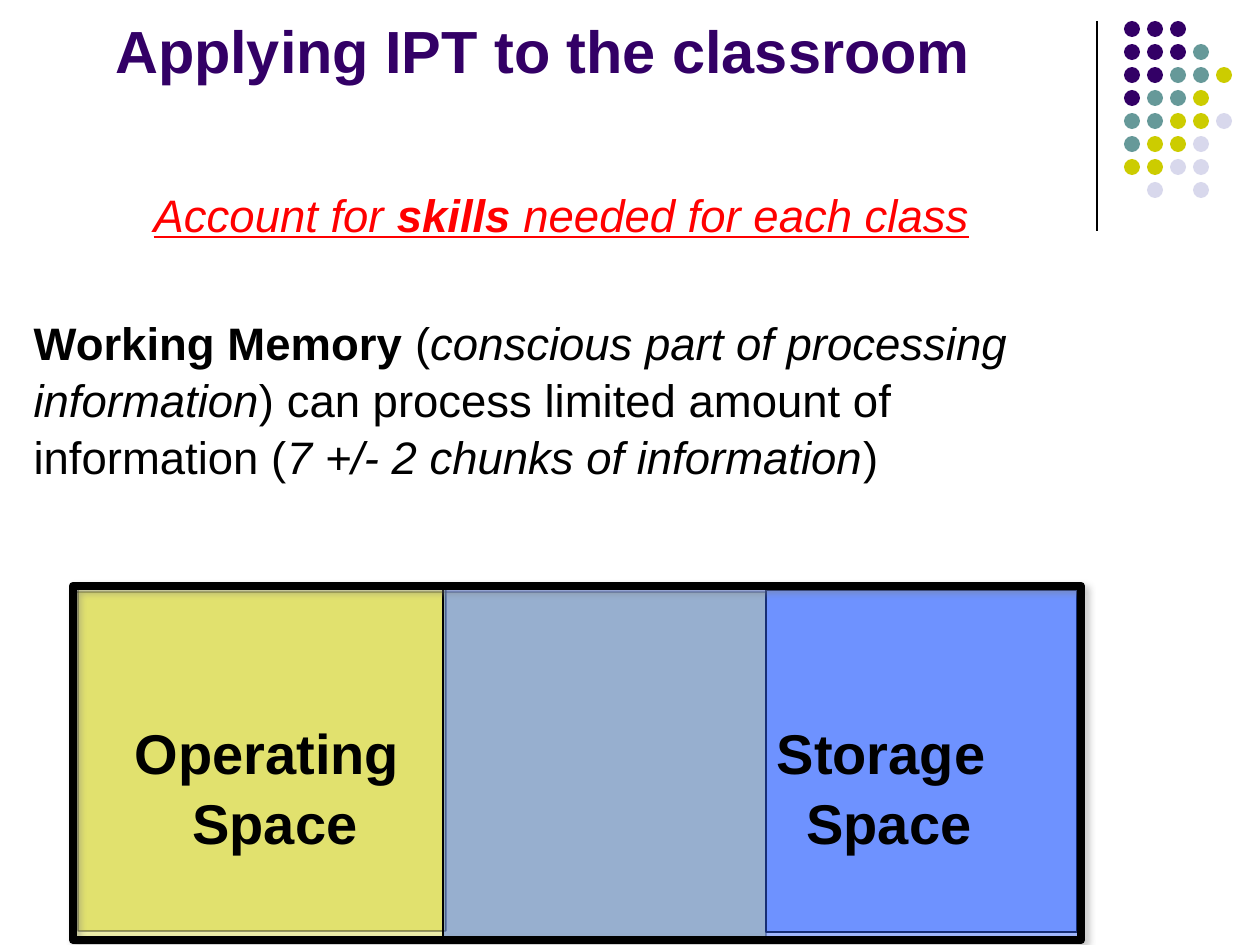
"""Build the slide on working memory and the skills needed for each class."""
from dataclasses import dataclass

from lxml.etree import SubElement
from pptx import Presentation
from pptx.dml.color import RGBColor
from pptx.enum.shapes import MSO_CONNECTOR, MSO_SHAPE
from pptx.enum.text import MSO_ANCHOR, MSO_AUTO_SIZE, PP_ALIGN
from pptx.oxml.ns import qn
from pptx.util import Emu, Pt


@dataclass(frozen=True)
class Theme:
    """Colours, font and type sizes."""
    font: str = "Arial"
    title_size: int = 34
    body_size: int = 26
    label_size: int = 32
    purple: str = "330066"
    teal: str = "669999"
    lime: str = "CCCC00"
    lavender: str = "D8D8EC"
    blue: str = "3366FF"
    red: str = "FF0000"
    black: str = "000000"
    grey: str = "808080"


def px(length):
    """Turn pixels into EMU."""
    return Emu(round(length * 914400 / 126))


def set_alpha(parent, percent):
    """Make the solid fill under an XML element partly opaque."""
    colour = parent.find(qn("a:solidFill")).find(qn("a:srgbClr"))
    SubElement(colour, qn("a:alpha"), val=str(percent * 1000))


class SlideBuilder:
    """Hold the theme and the current slide and draw each kind of element."""

    def __init__(self, theme, page):
        """Keep the theme and the slide."""
        self.theme = theme
        self.page = page

    def style(self, para, size, colour, align=PP_ALIGN.LEFT, bold=False, italic=False):
        """Set alignment and font on a paragraph."""
        para.alignment = align
        font = para.font
        font.name = self.theme.font
        font.size = Pt(size)
        font.bold = bold
        font.italic = italic
        font.color.rgb = RGBColor.from_string(colour)

    def place(self, box, left, top, width, height):
        """Move a box and make its text wrap at a fixed size."""
        box.left, box.top, box.width, box.height = map(px, (left, top, width, height))
        box.text_frame.word_wrap = True
        box.text_frame.auto_size = MSO_AUTO_SIZE.NONE

    def title(self, text, bounds):
        """Fill the title placeholder."""
        box = self.page.shapes.title
        self.place(box, *bounds)
        box.text_frame.vertical_anchor = MSO_ANCHOR.BOTTOM
        box.text_frame.text = text
        self.style(box.text_frame.paragraphs[0], self.theme.title_size,
                   self.theme.purple, PP_ALIGN.CENTER, bold=True)

    def body(self, bounds, inset_top):
        """Place the body placeholder and return its text frame."""
        box = self.page.placeholders[1]
        self.place(box, *bounds)
        box.text_frame.margin_top = px(inset_top)
        return box.text_frame

    def body_paragraph(self, para, spans, colour, align, italic=False, gap=0):
        """Write (text, property) spans into a body paragraph without a bullet."""
        properties = para._p.get_or_add_pPr()
        properties.set("marL", "0")
        properties.set("indent", "0")
        SubElement(properties, qn("a:buNone"))
        self.style(para, self.theme.body_size, colour, align, italic=italic)
        para.line_spacing = 1.05
        para.space_before = Pt(gap)
        for text, emphasis in spans:
            span = para.add_run()
            span.text = text
            for name in emphasis.split():
                setattr(span.font, name, True)

    def label(self, lines, bounds):
        """Add a bold centred label, one paragraph a line."""
        box = self.page.shapes.add_textbox(0, 0, 0, 0)
        self.place(box, *bounds)
        box.text_frame.text = "\n".join(lines)
        for para in box.text_frame.paragraphs:
            self.style(para, self.theme.label_size, self.theme.black,
                       PP_ALIGN.CENTER, bold=True)
            para.line_spacing = 1.04

    def rectangle(self, bounds, line_width):
        """Add an unfilled rectangle with a black outline."""
        box = self.page.shapes.add_shape(MSO_SHAPE.RECTANGLE, *map(px, bounds))
        box.shadow.inherit = False
        box.fill.background()
        box.line.color.rgb = RGBColor.from_string(self.theme.black)
        box.line.width = Pt(line_width)
        return box

    def pane(self, bounds, colour, opacity, line_opacity):
        """Add a see-through pane."""
        box = self.rectangle(bounds, 0.75)
        box.fill.solid()
        box.fill.fore_color.rgb = RGBColor.from_string(colour)
        properties = box.element.spPr
        set_alpha(properties, opacity)
        set_alpha(properties.find(qn("a:ln")), line_opacity)

    def frame(self, bounds):
        """Add the heavy frame with its soft shadow."""
        box = self.rectangle(bounds, 4.75)
        effects = box.element.spPr.find(qn("a:effectLst"))
        shadow = SubElement(effects, qn("a:outerShdw"), blurRad=str(Pt(4)),
                            dist=str(Pt(3)), dir="2700000", rotWithShape="0")
        colour = SubElement(shadow, qn("a:srgbClr"), val=self.theme.grey)
        SubElement(colour, qn("a:alpha"), val="43000")

    def rule(self, left, top, bottom):
        """Add a thin vertical line."""
        line = self.page.shapes.add_connector(
            MSO_CONNECTOR.STRAIGHT, px(left), px(top), px(left), px(bottom))
        line.line.color.rgb = RGBColor.from_string(self.theme.black)
        line.line.width = Pt(0.75)
        SubElement(line.element.spPr, qn("a:effectLst"))

    def dots(self, rows, left, top, step, size):
        """Add a grouped grid of dots from rows of colour letters."""
        colours = {"P": self.theme.purple, "T": self.theme.teal,
                   "L": self.theme.lime, "V": self.theme.lavender}
        group = self.page.shapes.add_group_shape()
        for row, letters in enumerate(rows):
            for column, letter in enumerate(letters):
                if letter in colours:
                    dot = group.shapes.add_shape(
                        MSO_SHAPE.OVAL, px(left + column * step),
                        px(top + row * step), px(size), px(size))
                    dot.shadow.inherit = False
                    dot.fill.solid()
                    dot.fill.fore_color.rgb = RGBColor.from_string(colours[letter])
                    dot.line.fill.background()


def main():
    """Build and save the deck."""
    deck = Presentation()
    deck.slide_width, deck.slide_height = px(1260), px(945)
    theme = Theme()
    builder = SlideBuilder(theme, deck.slides.add_slide(deck.slide_layouts[1]))

    builder.rule(1097, 21, 231)
    builder.dots(("PPP", "PPPT", "PPTTL", "PTTL", "TTLLV", "TLLV", "LLVV", ".V.V"),
                 left=1124, top=21, step=23, size=16)
    builder.title("Applying IPT to the classroom ", (0, 1, 1102, 91))

    frame = builder.body((21, 147, 1081, 451), inset_top=37)
    builder.body_paragraph(
        frame.paragraphs[0],
        (("Account for ", "underline"), ("skills", "underline bold"),
         (" needed for each class", "underline")),
        theme.red, PP_ALIGN.CENTER, italic=True)
    builder.body_paragraph(
        frame.add_paragraph(),
        (("Working Memory ", "bold"), ("(", ""),
         ("conscious part of processing information", "italic"),
         (") can process limited amount of information (", ""),
         ("7 +/- 2 chunks of information", "italic"), (")", "")),
        theme.black, PP_ALIGN.LEFT, gap=40.5)

    for bounds, colour, opacity, line_opacity in (
            ((73, 592, 693, 345), theme.lime, 34, 57),
            ((766, 590, 311, 342), theme.blue, 46, 100),
            ((78, 586, 368, 345), theme.lime, 34, 57),
            ((443, 586, 640, 351), theme.blue, 46, 100)):
        builder.pane(bounds, colour, opacity, line_opacity)
    for word, left in (("Operating ", 102), ("Storage ", 716)):
        builder.label((word, "Space"), (left, 710, 346, 149))
    builder.frame((73, 586, 1008, 354))

    deck.save("out.pptx")


if __name__ == "__main__":
    main()
